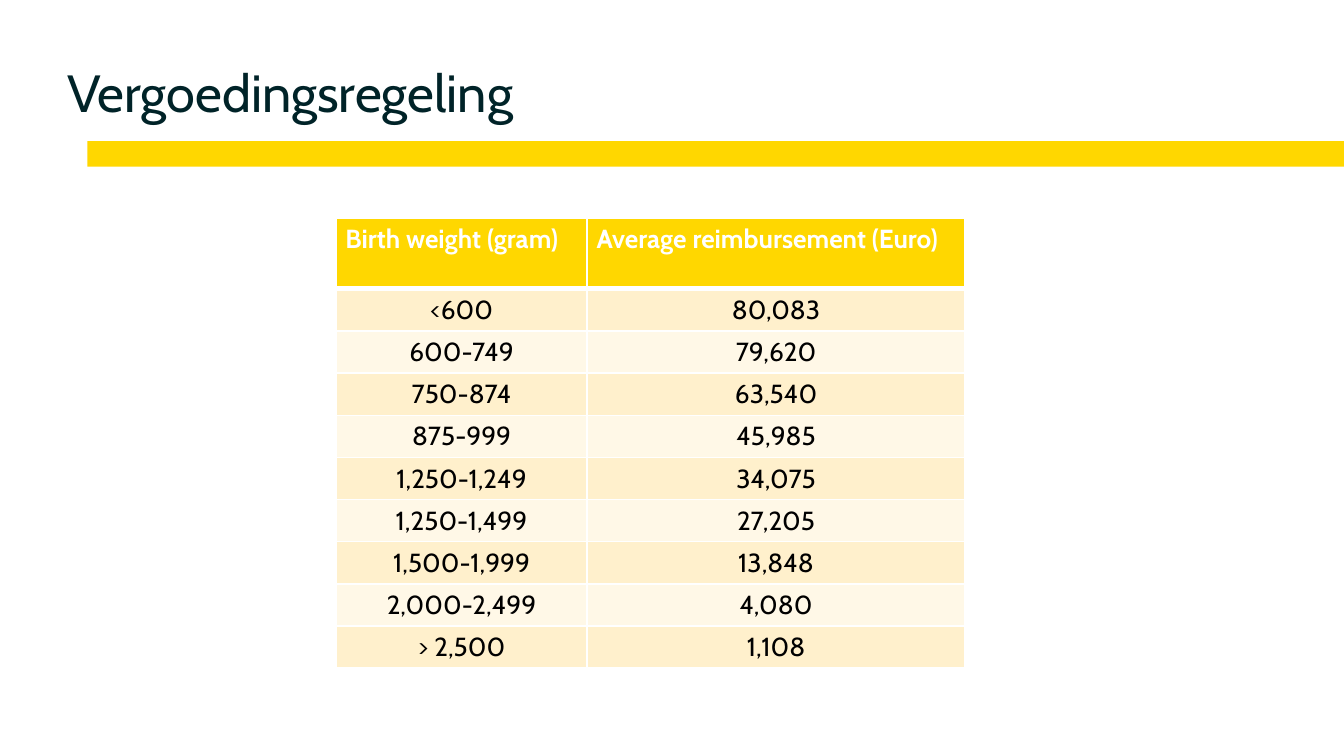
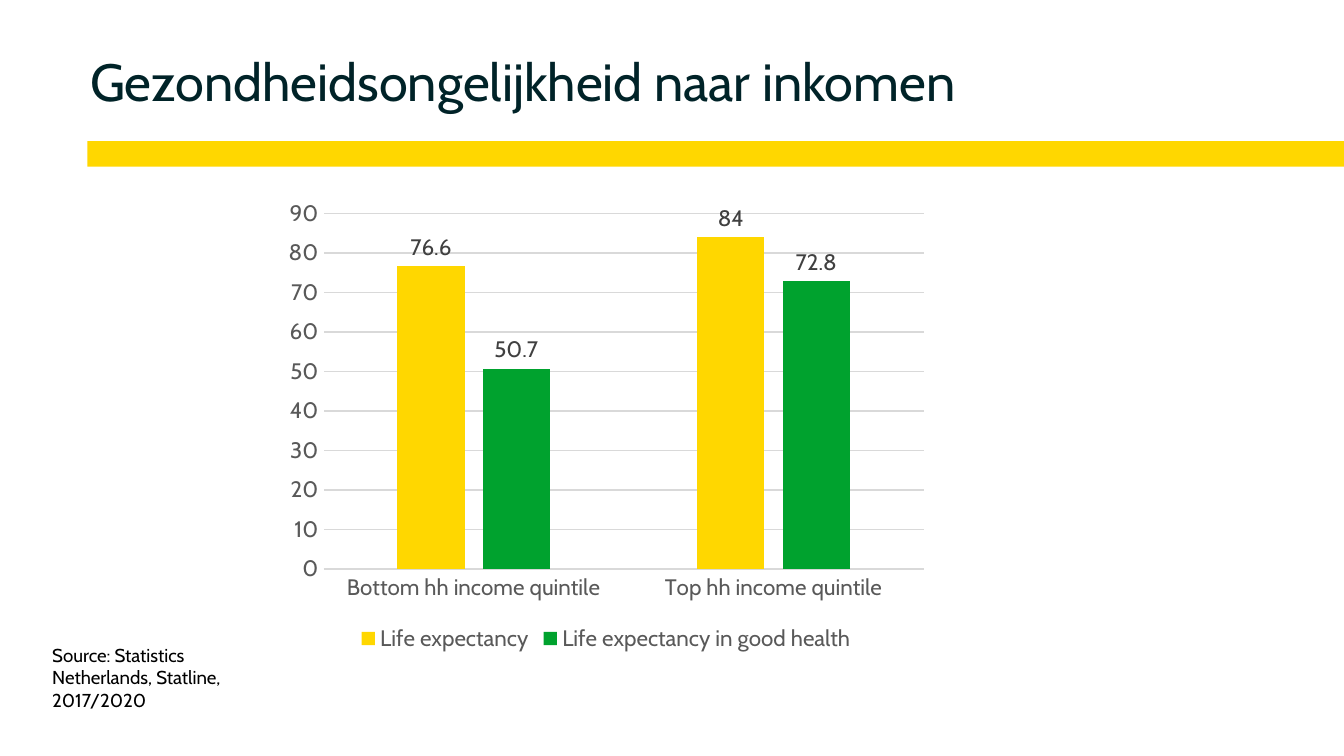
from lxml.etree import SubElement
from pptx import Presentation
from pptx.chart.data import CategoryChartData
from pptx.dml.color import RGBColor
from pptx.enum.chart import XL_CHART_TYPE, XL_LABEL_POSITION, XL_LEGEND_POSITION, XL_TICK_MARK
from pptx.enum.shapes import MSO_SHAPE
from pptx.enum.text import PP_ALIGN
from pptx.oxml.ns import qn
from pptx.util import Inches, Pt

FONT = "Cabin"
YELLOW, GREEN = "FFD700", "00A22E"
WHITE, BLACK, TITLE = "FFFFFF", "000000", "002328"
BAND_DARK, BAND_LIGHT = "FFF0CC", "FFF8E7"
GREY, LABEL_GREY, GRID_GREY = "595959", "404040", "D9D9D9"

REIMBURSEMENTS = [
    ("Birth weight (gram)", "Average reimbursement (Euro)"),
    ("<600", "80,083"),
    ("600-749", "79,620"),
    ("750-874", "63,540"),
    ("875-999", "45,985"),
    ("1,250-1,249", "34,075"),
    ("1,250-1,499", "27,205"),
    ("1,500-1,999", "13,848"),
    ("2,000-2,499", "4,080"),
    ("> 2,500", "1,108"),
]
INCOME_GROUPS = ["Bottom hh income quintile", "Top hh income quintile"]
EXPECTANCIES = [
    ("Life expectancy", (76.6, 84), YELLOW),
    ("Life expectancy in good health", (50.7, 72.8), GREEN),
]


def color(value):
    return RGBColor.from_string(value)


class Deck:
    def __init__(self):
        self.presentation = Presentation()
        self.presentation.slide_width = Inches(10)
        self.presentation.slide_height = Inches(10 * 9 / 16)
        self.slide = None

    def style_font(self, font, size, shade, bold=False):
        font.name = FONT
        font.size = Pt(size)
        font.bold = bold
        font.color.rgb = color(shade)

    def add_slide(self, title, left, top, width):
        self.slide = self.presentation.slides.add_slide(self.presentation.slide_layouts[6])
        self.add_band()
        frame = self.add_text(title, left, top, width, 0.81, 28, TITLE)
        frame.margin_left = frame.margin_right = frame.margin_top = frame.margin_bottom = 0
        frame.paragraphs[0].line_spacing = Pt(32)

    def add_band(self):
        band = self.slide.shapes.add_shape(
            MSO_SHAPE.RECTANGLE, Inches(0.65), Inches(1.05), Inches(9.35), Inches(0.19))
        band.shadow.inherit = False
        band.fill.solid()
        band.fill.fore_color.rgb = color(YELLOW)
        band.line.fill.background()

    def add_text(self, text, left, top, width, height, size, shade):
        box = self.slide.shapes.add_textbox(
            Inches(left), Inches(top), Inches(width), Inches(height))
        frame = box.text_frame
        frame.word_wrap = True
        frame.text = text
        self.style_font(frame.paragraphs[0].font, size, shade)
        return frame

    def add_borders(self, cell, top, bottom):
        properties = cell._tc.get_or_add_tcPr()
        for side, width in (("L", 1), ("R", 1), ("T", top), ("B", bottom)):
            line = SubElement(properties, qn(f"a:ln{side}"), w=str(Pt(width)))
            fill = SubElement(line, qn("a:solidFill"))
            SubElement(fill, qn("a:srgbClr"), val=WHITE)

    def add_table(self, rows, left, top, widths, header_height, row_height):
        height = header_height + row_height * (len(rows) - 1)
        table = self.slide.shapes.add_table(
            len(rows), len(widths), Inches(left), Inches(top),
            Inches(sum(widths)), Inches(height)).table
        table.first_row = table.horz_banding = False
        for column, width in zip(table.columns, widths):
            column.width = Inches(width)
        for index, values in enumerate(rows):
            header = index == 0
            table.rows[index].height = Inches(header_height if header else row_height)
            band = BAND_DARK if index % 2 else BAND_LIGHT
            for cell, value in zip(table.rows[index].cells, values):
                self.add_borders(cell, 3 if index == 1 else 1, 3 if header else 1)
                cell.fill.solid()
                cell.fill.fore_color.rgb = color(YELLOW if header else band)
                cell.margin_left = cell.margin_right = Inches(0.07)
                cell.margin_top = cell.margin_bottom = Inches(0.04)
                cell.text = value
                paragraph = cell.text_frame.paragraphs[0]
                paragraph.alignment = PP_ALIGN.LEFT if header else PP_ALIGN.CENTER
                self.style_font(paragraph.font, 14, WHITE if header else BLACK, header)

    def add_column_chart(self, categories, series_list, left, top, width, height):
        data = CategoryChartData()
        data.categories = categories
        for name, values, _ in series_list:
            data.add_series(name, values)
        chart = self.slide.shapes.add_chart(
            XL_CHART_TYPE.COLUMN_CLUSTERED, Inches(left), Inches(top),
            Inches(width), Inches(height), data).chart
        self.style_font(chart.font, 10, BLACK)
        chart.has_title = False
        chart.has_legend = True
        chart.legend.position = XL_LEGEND_POSITION.BOTTOM
        chart.legend.include_in_layout = False
        self.style_font(chart.legend.font, 12, GREY)

        for axis in (chart.category_axis, chart.value_axis):
            axis.major_tick_mark = axis.minor_tick_mark = XL_TICK_MARK.NONE
            self.style_font(axis.tick_labels.font, 12, GREY)
        value_axis = chart.value_axis
        value_axis.minimum_scale, value_axis.maximum_scale = 0, 90
        value_axis.major_unit = 10
        value_axis.format.line.fill.background()
        for line in (chart.category_axis.format.line, value_axis.major_gridlines.format.line):
            line.color.rgb = color(GRID_GREY)
            line.width = Pt(0.75)

        plot = chart.plots[0]
        plot.vary_by_categories = False
        plot.gap_width = 219
        plot.overlap = -27
        for series, (_, _, shade) in zip(plot.series, series_list):
            series.format.fill.solid()
            series.format.fill.fore_color.rgb = color(shade)
            labels = series.data_labels
            labels.show_value = True
            labels.position = XL_LABEL_POSITION.OUTSIDE_END
            self.style_font(labels.font, 12, LABEL_GREY)


def main():
    deck = Deck()
    deck.add_slide("Vergoedingsregeling", 0.5, 0.47, 8.86)
    deck.add_table(REIMBURSEMENTS, 2.5, 1.62, (1.87, 2.81), 0.53, 0.3)

    deck.add_slide("Gezondheidsongelijkheid naar inkomen", 0.67, 0.39, 8.92)
    deck.add_column_chart(INCOME_GROUPS, EXPECTANCIES, 2.05, 1.42, 4.92, 3.47)
    deck.add_text("Source: Statistics Netherlands, Statline, 2017/2020",
                  0.29, 4.74, 1.51, 0.61, 10, BLACK)
    deck.presentation.save("out.pptx")


if __name__ == "__main__":
    main()
